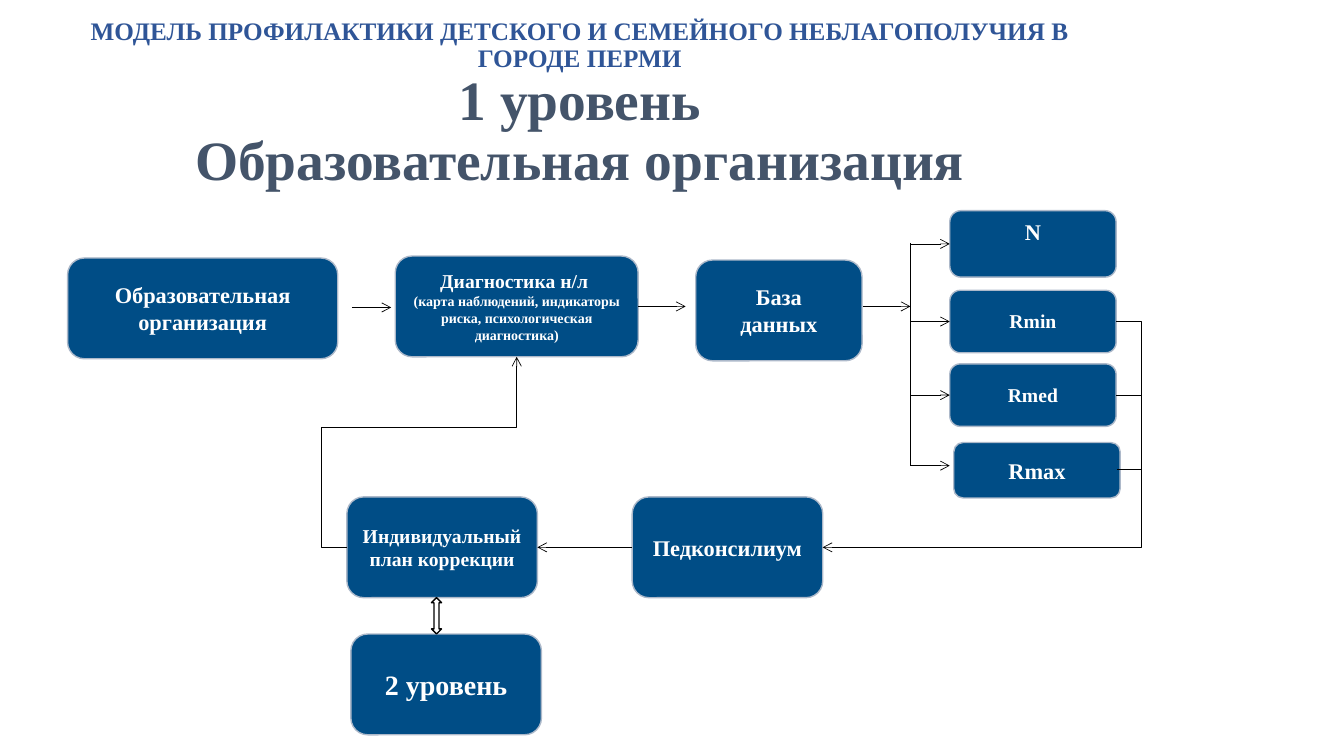
from lxml import etree
from pptx import Presentation, util as u
from pptx.dml.color import RGBColor
from pptx.enum import shapes, text
from pptx.oxml.ns import qn

THEME = dict(font="Times New Roman", heading="2F5597", title="44546A", box="004D86",
             edge="ADB9CA", white="FFFFFF", line="000000",
             heading_size=18, title_size=39.6, note=10, small=14, body=16, large=20)

TITLE = [("МОДЕЛЬ ПРОФИЛАКТИКИ ДЕТСКОГО И СЕМЕЙНОГО НЕБЛАГОПОЛУЧИЯ В ГОРОДЕ ПЕРМИ\v",
          "heading_size", "heading"),
         ("1 уровень\vОбразовательная организация", "title_size", "title")]

BOXES = {
    "school": ((0.67, 2.56, 2.68, 1), [("Образовательная организация", "body")]),
    "diagnosis": ((3.92, 2.54, 2.41, 1), [
        ("Диагностика н/л ", "small"),
        ("(карта наблюдений, индикаторы риска, психологическая диагностика)", "note")]),
    "database": ((6.9, 2.58, 1.65, 1), [("База", "body"), ("данных", "body")]),
    "plan": ((3.44, 4.93, 1.89, 1), [("Индивидуальный план коррекции", "small")]),
    "council": ((6.27, 4.93, 1.89, 1), [("Педконсилиум", "body")]),
    "level2": ((3.48, 6.29, 1.89, 1), [("2 уровень", "large")]),
    "N": ((9.42, 2.09, 1.65, 0.66), [("N", "body")]),
    "Rmin": ((9.42, 2.88, 1.65, 0.62), [("Rmin", "small")]),
    "Rmed": ((9.42, 3.61, 1.65, 0.62), [("Rmed", "small")]),
    "Rmax": ((9.46, 4.39, 1.65, 0.55), [("Rmax", "body")]),
}
BOTTOM_INSETS = {"N": 0.29, "Rmin": 0.07}

TOP, LEFT, BOTTOM, RIGHT = range(4)
BUS, RETURN = 9.03, 11.33
LINKS = [
    ((3.49, 3.05), (3.88, 3.05), True),
    (("diagnosis", RIGHT), (6.8, 3.04), True),
    ((8.56, 3.04), (BUS, 3.04), True),
    ((BUS, 2.41), (BUS, 4.62), False),
    ((BUS, 2.42), ("N", LEFT), True),
    ((BUS, 3.19), ("Rmin", LEFT), True),
    ((BUS, 3.92), ("Rmed", LEFT), True),
    ((BUS, 4.62), (9.42, 4.62), True),
    (("Rmed", RIGHT), (RETURN, 3.92), False),
    ((11.08, 4.66), (RETURN, 4.66), False),
    (("council", LEFT), ("plan", RIGHT), True),
]
ELBOWS = [
    (("Rmin", RIGHT), ("council", RIGHT), "bentConnector3", [-8600]),
    (("plan", LEFT), ("diagnosis", BOTTOM), "bentConnector4", [-14800, 63200]),
]


def color(name):
    return RGBColor.from_string(THEME[name])


def add_run(p, content, size="body", fill="white"):
    p.alignment = text.PP_ALIGN.CENTER
    for i, part in enumerate(content.split("\v")):
        if i:
            p.add_line_break()
        if part:
            r = p.add_run()
            r.text = part
            r.font.name, r.font.size, r.font.bold = THEME["font"], u.Pt(THEME[size]), True
            r.font.color.rgb = color(fill)


def add_box(s, name, place, lines):
    sp = s.shapes.add_shape(shapes.MSO_SHAPE.ROUNDED_RECTANGLE, *map(u.Inches, place))
    sp.shadow.inherit = False
    sp.fill.solid()
    sp.fill.fore_color.rgb = color("box")
    sp.line.color.rgb, sp.line.width = color("edge"), u.Pt(1)
    tf = sp.text_frame
    tf.word_wrap, tf.vertical_anchor = True, text.MSO_ANCHOR.MIDDLE
    tf.margin_bottom = u.Inches(BOTTOM_INSETS.get(name, 0.05))
    for i, (content, size) in enumerate(lines):
        add_run(tf.add_paragraph() if i else tf.paragraphs[0], content, size=size)
    return sp


def locate(end):
    if not isinstance(end[0], str):
        return end
    (x, y, w, h), _ = BOXES[end[0]]
    return [(x + w / 2, y), (x, y + h / 2), (x + w / 2, y + h), (x + w, y + h / 2)][end[1]]


def add_link(s, boxes, start, end, arrow=True, kind=shapes.MSO_CONNECTOR.STRAIGHT):
    c = s.shapes.add_connector(kind, *map(u.Inches, (*locate(start), *locate(end))))
    for target, join in ((start, c.begin_connect), (end, c.end_connect)):
        if isinstance(target[0], str):
            join(boxes[target[0]], target[1])
    c.line.color.rgb, c.line.width = color("line"), u.Pt(0.5)
    if arrow:
        etree.SubElement(c.line._get_or_add_ln(), qn("a:tailEnd"), type="arrow")
    etree.SubElement(c._element.spPr, qn("a:effectLst"))
    return c


def add_elbow(s, boxes, start, end, preset, adjustments):
    c = add_link(s, boxes, start, end, kind=shapes.MSO_CONNECTOR.ELBOW)
    geom = c._element.spPr.find(qn("a:prstGeom"))
    geom.set("prst", preset)
    guides = geom.find(qn("a:avLst"))
    for i, value in enumerate(adjustments, 1):
        etree.SubElement(guides, qn("a:gd"), name=f"adj{i}", fmla=f"val {value}")


def main():
    prs = Presentation()
    prs.slide_width, prs.slide_height = u.Inches(13.33), u.Inches(7.5)
    s = prs.slides.add_slide(prs.slide_layouts[6])

    tf = s.shapes.add_textbox(*map(u.Inches, (0.32, 0.62, 10.86, 0.85))).text_frame
    tf.word_wrap, tf.vertical_anchor = True, text.MSO_ANCHOR.MIDDLE
    tf.paragraphs[0].line_spacing = 0.9
    for content, size, fill in TITLE:
        add_run(tf.paragraphs[0], content, size=size, fill=fill)

    boxes = {name: add_box(s, name, *box) for name, box in BOXES.items()}
    for link in LINKS:
        add_link(s, boxes, *link)
    for elbow in ELBOWS:
        add_elbow(s, boxes, *elbow)

    sp = s.shapes.add_shape(shapes.MSO_SHAPE.UP_DOWN_ARROW,
                            *map(u.Inches, (4.28, 5.93, 0.1, 0.36)))
    sp.shadow.inherit = False
    sp.fill.solid()
    sp.fill.fore_color.rgb = color("white")
    sp.line.color.rgb, sp.line.width = color("line"), u.Pt(1)
    prs.save("out.pptx")


if __name__ == "__main__":
    main()
